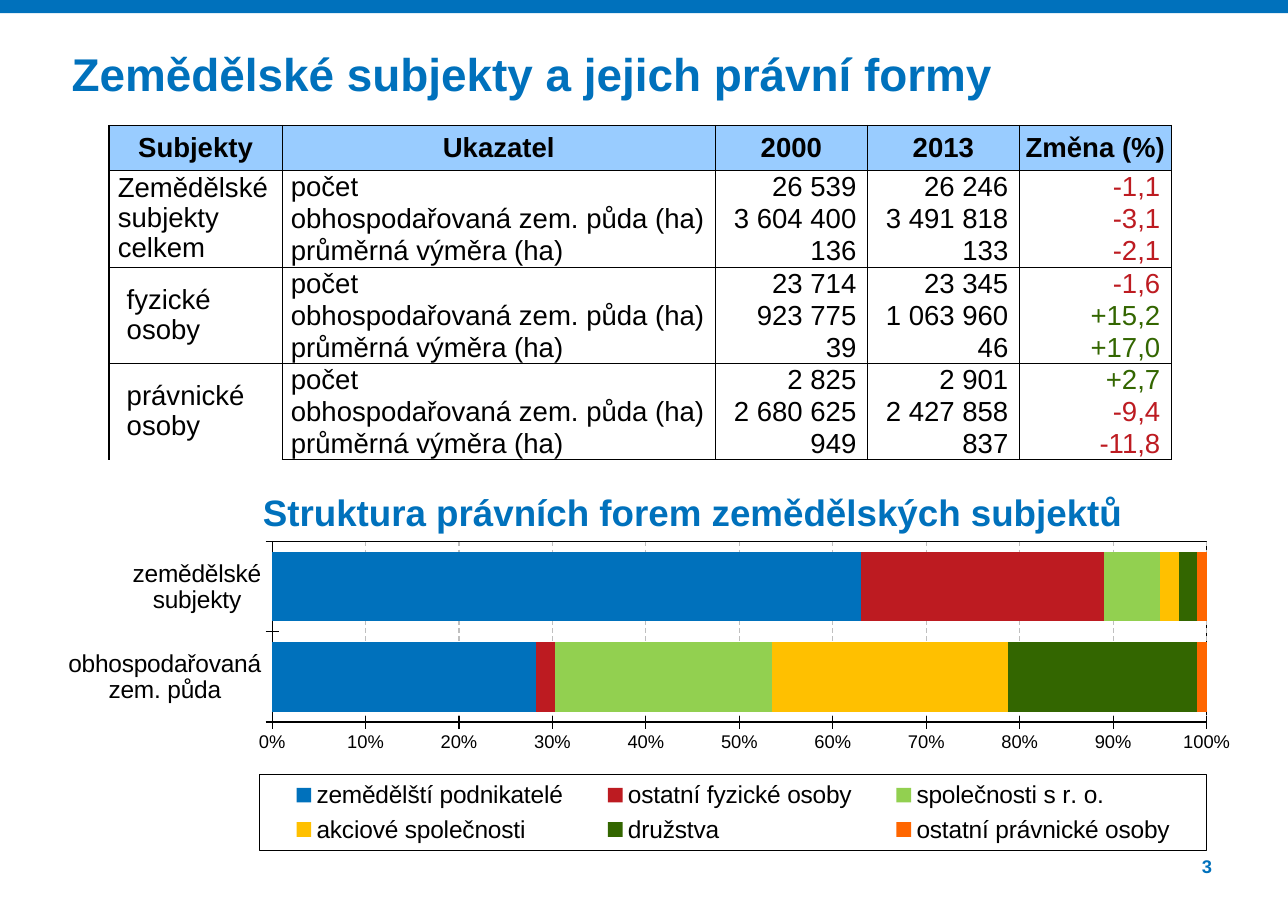
from lxml.etree import SubElement
from pptx import Presentation
from pptx.chart.data import CategoryChartData
from pptx.dml.color import RGBColor
from pptx.enum.chart import XL_CHART_TYPE as ChartType, XL_LEGEND_POSITION as LegendPosition, XL_TICK_MARK as TickMark
from pptx.enum.dml import MSO_LINE as Dash
from pptx.enum.shapes import MSO_SHAPE as Shape
from pptx.enum.text import MSO_ANCHOR as Anchor, PP_ALIGN as Align
from pptx.oxml import parse_xml
from pptx.oxml.ns import nsdecls, qn
from pptx.util import Inches, Pt

BLUE = RGBColor(0x00, 0x71, 0xBC)
RED = RGBColor(0xBD, 0x1B, 0x21)
LIME = RGBColor(0x92, 0xD0, 0x50)
AMBER = RGBColor(0xFF, 0xC0, 0x00)
GREEN = RGBColor(0x33, 0x66, 0x00)
ORANGE = RGBColor(0xFF, 0x66, 0x00)
SKY = RGBColor(0x99, 0xCC, 0xFF)
GREY = RGBColor(0xBF, 0xBF, 0xBF)
BLACK = RGBColor(0x00, 0x00, 0x00)
WHITE = RGBColor(0xFF, 0xFF, 0xFF)

HEADINGS = ["Subjekty", "Ukazatel", "2000", "2013", "Změna (%)"]
INDICATORS = ["počet", "obhospodařovaná zem. půda (ha)", "průměrná výměra (ha)"]
GROUPS = [
    ("Zemědělské subjekty celkem", 0.08,
     [("26 539", "26 246", "-1,1"), ("3 604 400", "3 491 818", "-3,1"), ("136", "133", "-2,1")]),
    ("fyzické\nosoby", 0.16,
     [("23 714", "23 345", "-1,6"), ("923 775", "1 063 960", "+15,2"), ("39", "46", "+17,0")]),
    ("právnické\nosoby", 0.16,
     [("2 825", "2 901", "+2,7"), ("2 680 625", "2 427 858", "-9,4"), ("949", "837", "-11,8")]),
]
CATEGORIES = ["obhospodařovaná\nzem. půda", "zemědělské\nsubjekty"]
LEGAL_FORMS = [
    ("zemědělští podnikatelé", (28, 63), BLUE),
    ("ostatní fyzické osoby", (2, 26), RED),
    ("společnosti s r. o.", (23, 6), LIME),
    ("akciové společnosti", (25, 2), AMBER),
    ("družstva", (20, 2), GREEN),
    ("ostatní právnické osoby", (1, 1), ORANGE),
]
NO_TABLE_STYLE = "{2D5ABB26-0587-4C30-8999-92F81FD0307C}"


class Page:
    """A slide on a grid of 100 columns and 100 rows, with its text style."""

    font = "Arial"

    def __init__(self, deck):
        self.column = deck.slide_width / 100
        self.row = deck.slide_height / 100
        self.shapes = deck.slides.add_slide(deck.slide_layouts[6]).shapes

    def area(self, left, top, width, height):
        return (round(left * self.column), round(top * self.row),
                round(width * self.column), round(height * self.row))

    def style(self, font, size, color=BLACK, bold=False):
        font.name, font.size, font.bold = self.font, Pt(size), bold
        font.color.rgb = color

    def fill_in(self, frame, text, size, color, bold, align, spacing=1.0):
        frame.text = text
        for paragraph in frame.paragraphs:
            paragraph.alignment = align
            paragraph.line_spacing = spacing
            for run in paragraph.runs:
                self.style(run.font, size, color, bold)

    def band(self, area, color):
        band = self.shapes.add_shape(Shape.RECTANGLE, *self.area(*area))
        band.shadow.inherit = False
        band.fill.solid()
        band.fill.fore_color.rgb = color
        band.line.fill.background()

    def text(self, area, text, size, align=Align.LEFT, anchor=Anchor.TOP, wrap=True):
        frame = self.shapes.add_textbox(*self.area(*area)).text_frame
        frame.margin_left = frame.margin_right = frame.margin_top = frame.margin_bottom = 0
        frame.word_wrap, frame.vertical_anchor = wrap, anchor
        self.fill_in(frame, text, size, BLUE, True, align)

    def cell(self, cell, text, borders, fill=WHITE, color=BLACK, bold=False,
             align=Align.LEFT, anchor=Anchor.BOTTOM, left=0, right=0):
        cell.margin_left, cell.margin_right = Inches(left), Inches(right)
        cell.margin_top = cell.margin_bottom = 0
        cell.vertical_anchor = anchor
        self.fill_in(cell.text_frame, text, 18, color, bold, align, 0.97)
        properties = cell._tc.get_or_add_tcPr()
        for side, weight in zip("LRTB", borders):
            line = SubElement(properties, qn(f"a:ln{side}"), w=str(Pt(weight)))
            paint = SubElement(line, qn("a:solidFill" if weight else "a:noFill"))
            if weight:
                SubElement(paint, qn("a:srgbClr"), val=str(BLACK))
        cell.fill.solid()
        cell.fill.fore_color.rgb = fill

    def table(self, left, top, widths, header_height, row_height):
        row_count = 1 + len(GROUPS) * len(INDICATORS)
        area = self.area(left, top, sum(widths), header_height + row_height * (row_count - 1))
        table = self.shapes.add_table(row_count, len(widths), *area).table
        table._tbl.tblPr.find(qn("a:tableStyleId")).text = NO_TABLE_STYLE
        for column, width in zip(table.columns, widths):
            column.width = round(width * self.column)
        for index, row in enumerate(table.rows):
            row.height = round((row_height if index else header_height) * self.row)

        last = len(widths) - 1
        edges = [(0.5 if c else 1, 1 if c == last else 0.5) for c in range(len(widths))]
        for c, heading in enumerate(HEADINGS):
            self.cell(table.cell(0, c), heading, (*edges[c], 1, 1), SKY, bold=True,
                      align=Align.CENTER, anchor=Anchor.MIDDLE)
        for g, (subject, indent, values) in enumerate(GROUPS):
            start = 1 + g * len(INDICATORS)
            end = start + len(INDICATORS) - 1
            for r, (indicator, figures) in enumerate(zip(INDICATORS, values), start):
                above = 0 if r > start else 0.5 if g else 1
                below = 0 if r < end else 1 if r == row_count - 1 else 0.5
                self.cell(table.cell(r, 0), subject if r == start else "",
                          (*edges[0], above, below), anchor=Anchor.MIDDLE, left=indent)
                self.cell(table.cell(r, 1), indicator, (*edges[1], above, below), left=0.08)
                for c, figure in enumerate(figures, 2):
                    color = {"-": RED, "+": GREEN}.get(figure[0], BLACK)
                    self.cell(table.cell(r, c), figure, (*edges[c], above, below),
                              color=color, align=Align.RIGHT, right=0.1)
            table.cell(start, 0).merge(table.cell(end, 0))

    def outline(self, parent):
        parent.append(parse_xml(
            f'<c:spPr {nsdecls("c", "a")}><a:noFill/><a:ln w="{Pt(0.75)}"><a:solidFill>'
            f'<a:srgbClr val="{BLACK}"/></a:solidFill></a:ln></c:spPr>'))

    def layout(self, x, y, w, h, target=""):
        return parse_xml(
            f'<c:layout {nsdecls("c")}><c:manualLayout>{target}'
            '<c:xMode val="edge"/><c:yMode val="edge"/>'
            f'<c:x val="{x}"/><c:y val="{y}"/><c:w val="{w}"/><c:h val="{h}"/>'
            '</c:manualLayout></c:layout>')

    def chart(self, area):
        data = CategoryChartData()
        data.categories = CATEGORIES
        for name, shares, _ in LEGAL_FORMS:
            data.add_series(name, shares)
        chart = self.shapes.add_chart(ChartType.BAR_STACKED_100, *self.area(*area), data).chart
        self.style(chart.font, 18)
        chart.has_title = False
        plot = chart.plots[0]
        plot.gap_width, plot.overlap, plot.vary_by_categories = 30, 100, False
        for series, (_, _, color) in zip(plot.series, LEGAL_FORMS):
            series.format.fill.solid()
            series.format.fill.fore_color.rgb = color

        shares_axis = chart.value_axis
        for axis, size in ((chart.category_axis, 16), (shares_axis, 12)):
            self.style(axis.tick_labels.font, size)
            axis.major_tick_mark = TickMark.CROSS
            axis.format.line.color.rgb = BLACK
            axis.format.line.width = Pt(0.75)
        shares_axis.minimum_scale, shares_axis.maximum_scale = 0, 1
        shares_axis.major_unit = 0.1
        shares_axis.tick_labels.number_format = "0%"
        shares_axis.tick_labels.number_format_is_linked = False
        grid = shares_axis.major_gridlines.format.line
        grid.color.rgb, grid.width, grid.dash_style = GREY, Pt(0.75), Dash.DASH

        plot_area = chart._chartSpace.chart.plotArea
        for automatic in plot_area.findall(qn("c:layout")):
            plot_area.remove(automatic)
        plot_area.insert(0, self.layout(0.19, 0.05, 0.76, 0.52, '<c:layoutTarget val="inner"/>'))
        self.outline(plot_area)

        chart.has_legend = True
        legend = chart.legend
        legend.position, legend.include_in_layout = LegendPosition.BOTTOM, False
        for automatic in legend._element.findall(qn("c:layout")):
            legend._element.remove(automatic)
        legend._element.find(qn("c:legendPos")).addnext(self.layout(0.18, 0.72, 0.77, 0.22))
        self.outline(legend._element)
        self.style(legend.font, 16)


def main():
    deck = Presentation()
    deck.slide_width, deck.slide_height = Inches(11.69), Inches(8.27)
    page = Page(deck)
    page.band((0, 0, 100, 1.45), BLUE)
    page.text((87.43, 93.83, 6.67, 2.54), "3", 12, Align.RIGHT)
    page.text((5.56, 4.23, 94.44, 7.62), "Zemědělské subjekty a jejich právní formy", 30,
              anchor=Anchor.MIDDLE)
    page.table(8.47, 13.78, [13.43, 33.65, 11.8, 11.8, 11.8], 4.96, 3.38)
    page.chart((2.99, 57.56, 95.47, 38.09))
    page.text((17.71, 53.81, 72.11, 5.68), "Struktura právních forem zemědělských subjektů", 24,
              Align.CENTER, wrap=False)
    deck.save("out.pptx")


if __name__ == "__main__":
    main()
